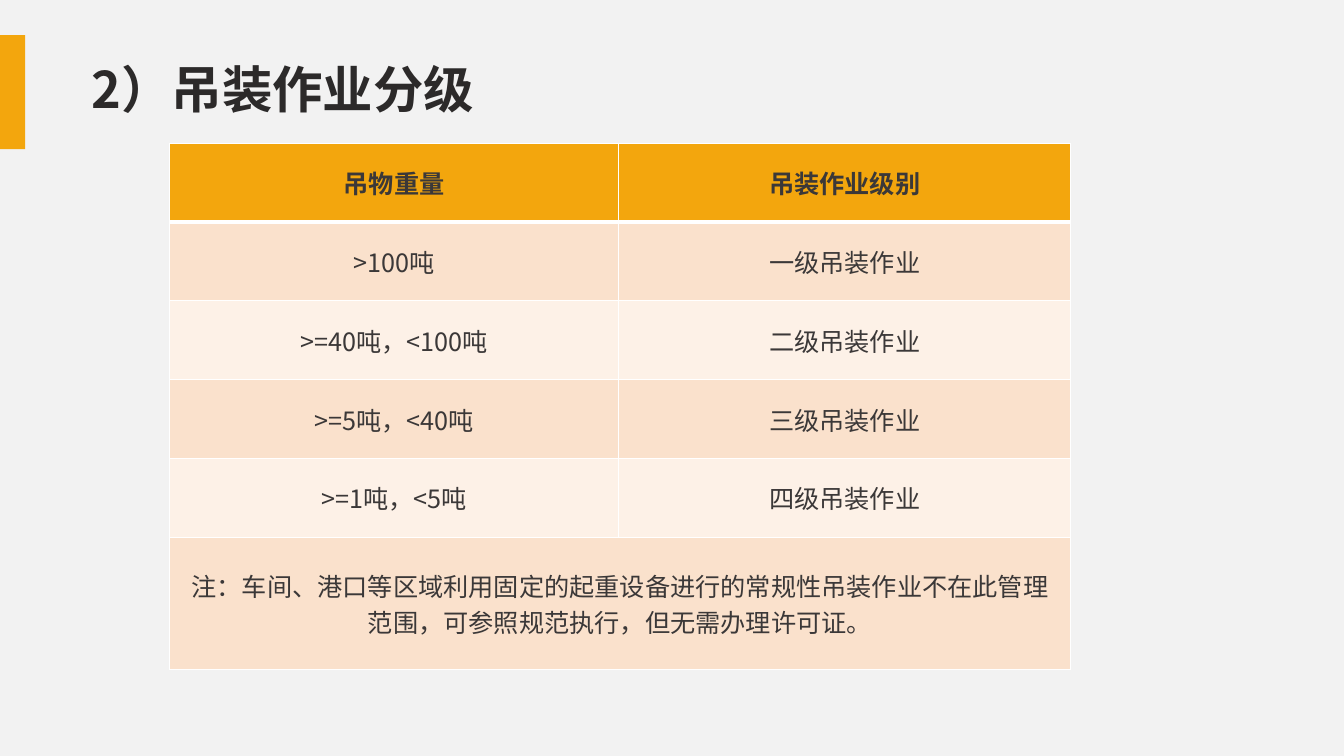
from lxml.etree import SubElement
from pptx import Presentation
from pptx.dml.color import RGBColor
from pptx.enum.shapes import MSO_SHAPE
from pptx.enum.text import MSO_ANCHOR, PP_ALIGN
from pptx.oxml import parse_xml
from pptx.oxml.ns import nsdecls, qn
from pptx.util import Pt

TITLE = "2）吊装作业分级"
HEADER = ("吊物重量", "吊装作业级别")
LEVELS = [
    (">100吨", "一级吊装作业"),
    (">=40吨，<100吨", "二级吊装作业"),
    (">=5吨，<40吨", "三级吊装作业"),
    (">=1吨，<5吨", "四级吊装作业"),
]
NOTE = "注：车间、港口等区域利用固定的起重设备进行的常规性吊装作业不在此管理范围，可参照规范执行，但无需办理许可证。"

FONT = "Noto Sans CJK SC"
BACKGROUND, ORANGE, WHITE = "F2F2F2", "F3A60D", "FFFFFF"
BANDS = ("FDF1E7", "FAE1CC")
TITLE_COLOR, TABLE_COLOR = "2C2A2A", "3B3838"
COLUMN_WIDTHS = (321, 322.6)
ROW_HEIGHT, NOTE_HEIGHT = 56.3, 94.3


def color(hex_value):
    """Turn a hex string into a colour."""
    return RGBColor.from_string(hex_value)


def paint(target, hex_value):
    """Give a background, shape or cell a solid fill."""
    target.fill.solid()
    target.fill.fore_color.rgb = color(hex_value)


def write(text_frame, text, size, hex_value, bold):
    """Put text in a frame and format it for Latin and Chinese characters."""
    text_frame.text = text
    text_frame.word_wrap = True
    paragraph = text_frame.paragraphs[0]
    for run in paragraph.runs:
        run.font.name = FONT
        run.font.size = Pt(size)
        run.font.bold = bold
        run.font.color.rgb = color(hex_value)
        SubElement(run.font._element, qn("a:ea"), typeface=FONT)
    return paragraph


def set_borders(cell, top, bottom):
    """Draw white borders around a cell, with 1 pt sides."""
    properties = cell._tc.get_or_add_tcPr()
    for index, (side, width) in enumerate(zip("LRTB", (1, 1, top, bottom))):
        properties.insert(index, parse_xml(
            f'<a:ln{side} {nsdecls("a")} w="{Pt(width)}"><a:solidFill>'
            f'<a:srgbClr val="{WHITE}"/></a:solidFill></a:ln{side}>'))


def add_title(slide):
    """Add the slide title."""
    box = slide.shapes.add_textbox(Pt(58.3), Pt(28.8), Pt(630), Pt(73.4))
    paragraph = write(box.text_frame, TITLE, 36, TITLE_COLOR, True)
    paragraph.line_spacing = 0.9
    box.text_frame.vertical_anchor = MSO_ANCHOR.MIDDLE


def add_level_table(slide):
    """Add the table of lifting levels with its merged note row."""
    rows = [HEADER, *LEVELS, (NOTE, "")]
    last = len(rows) - 1
    heights = [ROW_HEIGHT] * last + [NOTE_HEIGHT]
    frame = slide.shapes.add_table(
        len(rows), len(HEADER), Pt(121), Pt(102.3),
        Pt(sum(COLUMN_WIDTHS)), Pt(sum(heights)))
    table = frame.table
    for column, width in zip(table.columns, COLUMN_WIDTHS):
        column.width = Pt(width)
    for row, height in zip(table.rows, heights):
        row.height = Pt(height)
    table.cell(last, 0).merge(table.cell(last, 1))
    for row_index, texts in enumerate(rows):
        is_header = row_index == 0
        for column_index, text in enumerate(texts):
            cell = table.cell(row_index, column_index)
            paint(cell, ORANGE if is_header else BANDS[row_index % 2])
            set_borders(cell, 3 if row_index == 1 else 1, 3 if is_header else 1)
            cell.vertical_anchor = MSO_ANCHOR.MIDDLE
            if text:
                paragraph = write(cell.text_frame, text, 18, TABLE_COLOR, is_header)
                paragraph.alignment = PP_ALIGN.CENTER


def add_accent_bar(slide):
    """Add the orange bar at the left edge."""
    bar = slide.shapes.add_shape(
        MSO_SHAPE.RECTANGLE, Pt(-0.7), Pt(25.2), Pt(18.7), Pt(81.4))
    bar.shadow.inherit = False
    paint(bar, ORANGE)
    bar.line.fill.background()


def main():
    """Build and save the slide."""
    presentation = Presentation()
    presentation.slide_width, presentation.slide_height = Pt(960), Pt(540)
    slide = presentation.slides.add_slide(presentation.slide_layouts[6])
    paint(slide.background, BACKGROUND)
    add_title(slide)
    add_level_table(slide)
    add_accent_bar(slide)
    presentation.save("out.pptx")


if __name__ == "__main__":
    main()
